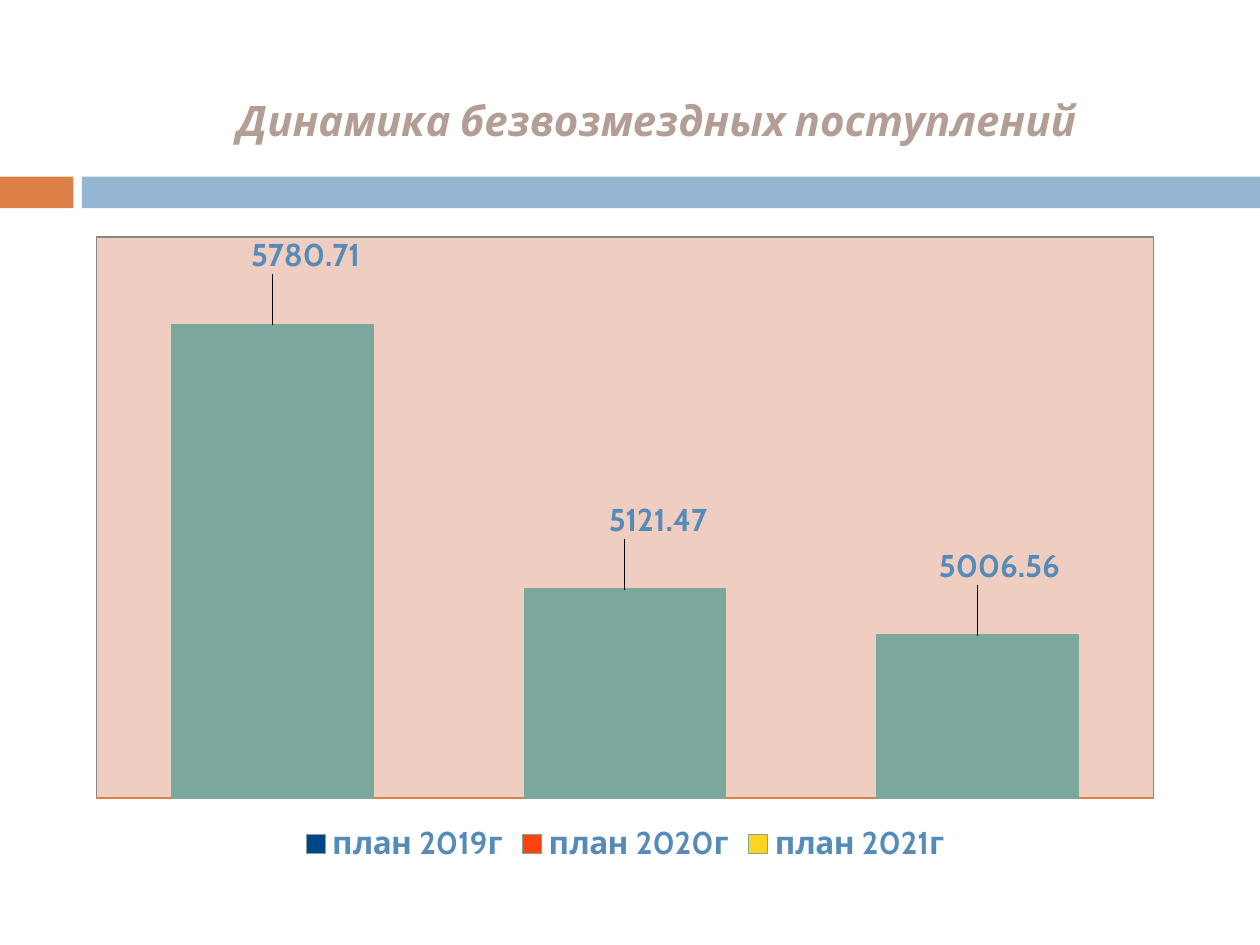
"""Build a slide with a column chart of gratuitous receipts by plan year."""
from lxml import etree
from pptx import Presentation
from pptx.chart.data import CategoryChartData
from pptx.dml.color import RGBColor
from pptx.enum.chart import XL_CHART_TYPE, XL_LABEL_POSITION, XL_LEGEND_POSITION, XL_TICK_LABEL_POSITION, XL_TICK_MARK
from pptx.enum.shapes import MSO_SHAPE
from pptx.enum.text import MSO_ANCHOR, PP_ALIGN
from pptx.oxml import parse_xml
from pptx.oxml.ns import qn
from pptx.util import Cm, Pt

COLUMN = XL_CHART_TYPE.COLUMN_CLUSTERED
OUTSIDE_END = XL_LABEL_POSITION.OUTSIDE_END
BOTTOM = XL_LEGEND_POSITION.BOTTOM
NO_LABELS = XL_TICK_LABEL_POSITION.NONE
NO_TICKS = XL_TICK_MARK.NONE
RECTANGLE = MSO_SHAPE.RECTANGLE
MIDDLE = MSO_ANCHOR.MIDDLE
CENTER = PP_ALIGN.CENTER
FONT = "Cabin"
COLORS = {"orange": "DD8047", "blue": "94B6D2", "title": "B39D94", "plot": "EFCDC1",
          "column": "7BA79D", "label": "558BB8", "border": "888888"}
CHART_NAMESPACE = "http://schemas.openxmlformats.org/drawingml/2006/chart"
DRAWING_NAMESPACE = "http://schemas.openxmlformats.org/drawingml/2006/main"


def set_font(font, size, color):
    font.name = FONT
    font.size = Pt(size)
    font.bold = True
    font.color.rgb = RGBColor.from_string(COLORS[color])


def manual_layout(settings):
    layout = etree.Element(qn("c:layout"))
    manual = etree.SubElement(layout, qn("c:manualLayout"))
    for name, value in settings.items():
        etree.SubElement(manual, qn(f"c:{name}")).set("val", str(value))
    return layout


presentation = Presentation()
presentation.slide_width = Cm(25.4)
presentation.slide_height = Cm(19.05)
slide = presentation.slides.add_slide(presentation.slide_layouts[6])

for left, width, color in ((0, 1.48, "orange"), (1.65, 23.75, "blue")):
    band = slide.shapes.add_shape(RECTANGLE, Cm(left), Cm(3.56), Cm(width), Cm(0.64))
    band.shadow.inherit = False
    band.fill.solid()
    band.fill.fore_color.rgb = RGBColor.from_string(COLORS[color])
    band.line.fill.background()

title = slide.shapes.add_textbox(Cm(1.5), Cm(1.52), Cm(22.63), Cm(1.8))
title_frame = title.text_frame
title_frame.word_wrap = True
title_frame.vertical_anchor = MIDDLE
title_frame.margin_left = Cm(1.1)
paragraph = title_frame.paragraphs[0]
paragraph.alignment = CENTER
run = paragraph.add_run()
run.text = "Динамика безвозмездных поступлений"
set_font(run.font, 24, "title")
run.font.italic = True

chart_data = CategoryChartData()
chart_data.categories = [f"план {year}г" for year in (2019, 2020, 2021)]
chart_data.add_series("Столбец1", (5780.71, 5121.47, 5006.56))
chart = slide.shapes.add_chart(COLUMN, Cm(1.5), Cm(4.52), Cm(22.2), Cm(13), chart_data).chart
chart.has_title = False
chart.font.name = FONT
chart.font.size = Pt(18)
chart.has_legend = True
chart.legend.position = BOTTOM
chart.legend.include_in_layout = False
set_font(chart.legend.font, 18, "label")

value_axis = chart.value_axis
value_axis.minimum_scale = 4600
value_axis.maximum_scale = 6000
value_axis.has_major_gridlines = False
value_axis.major_tick_mark = NO_TICKS
value_axis.tick_label_position = NO_LABELS
value_axis.format.line.fill.background()
category_axis = chart.category_axis
category_axis.major_tick_mark = NO_TICKS
category_axis.tick_label_position = NO_LABELS
category_axis.format.line.color.rgb = RGBColor.from_string(COLORS["orange"])

plot = chart.plots[0]
plot.vary_by_categories = True
plot.gap_width = 75
series = plot.series[0]
series.format.fill.solid()
series.format.fill.fore_color.rgb = RGBColor.from_string(COLORS["column"])
series.format.line.color.rgb = RGBColor.from_string(COLORS["column"])
series.format.line.width = Pt(0.79)
for index, shift in enumerate((0.03, 0.03, 0.02)):
    label = series.points[index].data_label
    set_font(label.font, 18, "label")
    label.position = OUTSIDE_END
series_labels = series.data_labels
series_labels.show_value = True
set_font(series_labels.font, 18, "label")
for label_element, shift in zip(series_labels._element.findall(qn("c:dLbl")), (0.03, 0.03, 0.02)):
    label_element.find(qn("c:idx")).addnext(manual_layout({"x": shift, "y": -0.07}))

plot_area = chart._chartSpace.chart.plotArea
for layout in plot_area.findall(qn("c:layout")):
    plot_area.remove(layout)
plot_area.insert(0, manual_layout({"layoutTarget": "inner", "xMode": "edge", "yMode": "edge",
                                   "x": 0.02, "y": 0.02, "w": 0.96, "h": 0.87}))
plot_area.append(parse_xml(
    f'<c:spPr xmlns:c="{CHART_NAMESPACE}" xmlns:a="{DRAWING_NAMESPACE}">'
    f'<a:solidFill><a:srgbClr val="{COLORS["plot"]}"/></a:solidFill>'
    f'<a:ln w="9525"><a:solidFill><a:srgbClr val="{COLORS["border"]}"/></a:solidFill></a:ln></c:spPr>'))

presentation.save("out.pptx")
